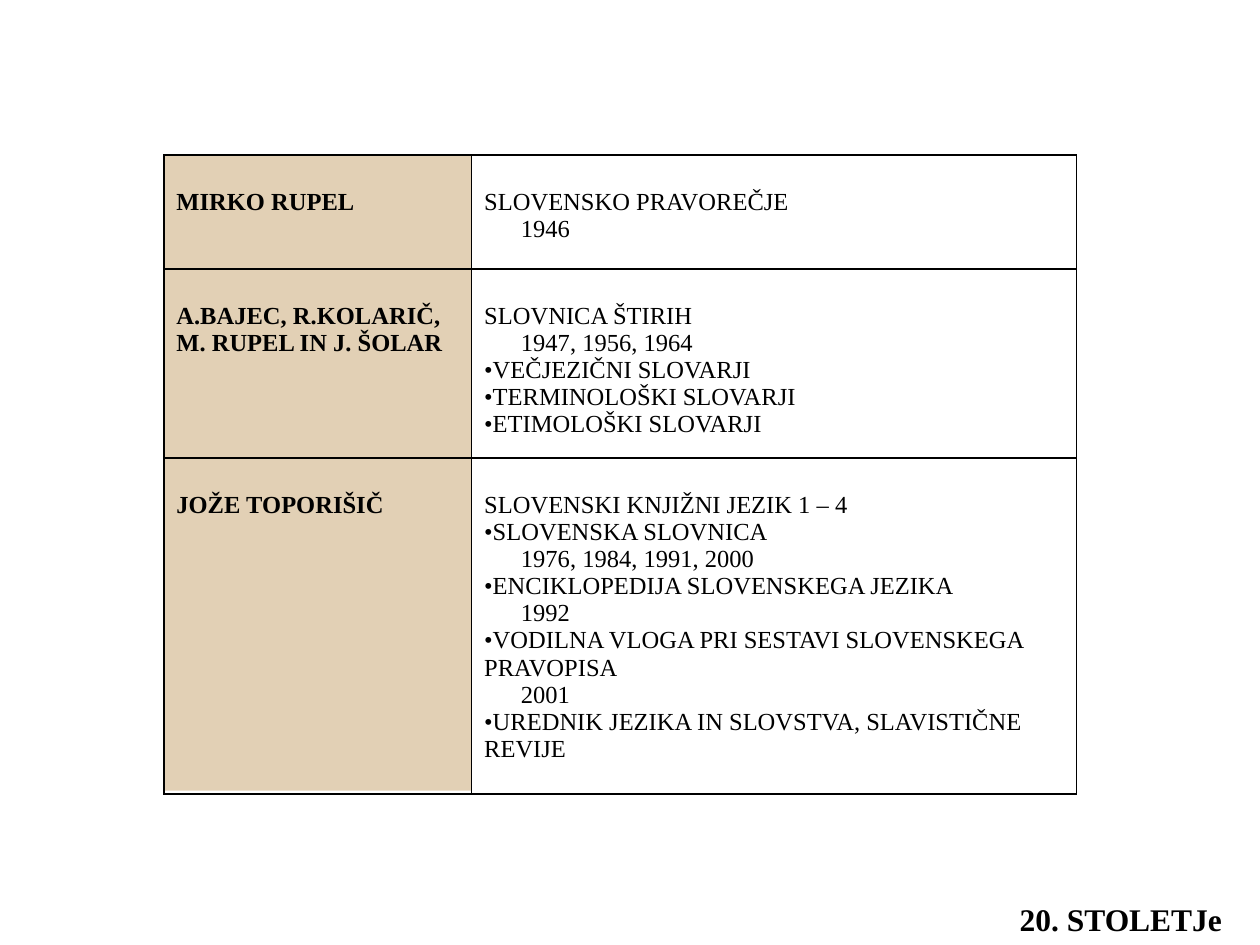
from lxml import etree
from pptx import Presentation
from pptx.dml.color import RGBColor
from pptx.enum.shapes import MSO_SHAPE
from pptx.enum.text import MSO_AUTO_SIZE, PP_ALIGN
from pptx.oxml.ns import qn
from pptx.util import Pt

RECT = MSO_SHAPE.RECTANGLE
CENTER = PP_ALIGN.CENTER
GROW = MSO_AUTO_SIZE.SHAPE_TO_FIT_TEXT
FONT = "Times New Roman"
BLACK, TAN = "000000", "D5BA93"
TEXT, BULLET, YEAR = "text", "bullet", "year"

COLS = [175.9, 345.6]
ROWS = [
    (65.2, ["MIRKO RUPEL"],
     [(TEXT, "SLOVENSKO PRAVOREČJE"), (YEAR, "1946")]),
    (108, ["A.BAJEC, R.KOLARIČ,", "M. RUPEL IN J. ŠOLAR"],
     [(TEXT, "SLOVNICA ŠTIRIH"), (YEAR, "1947, 1956, 1964"),
      (BULLET, "VEČJEZIČNI SLOVARJI"), (BULLET, "TERMINOLOŠKI SLOVARJI"),
      (BULLET, "ETIMOLOŠKI SLOVARJI")]),
    (192, ["JOŽE TOPORIŠIČ"],
     [(TEXT, "SLOVENSKI KNJIŽNI JEZIK 1 – 4"),
      (BULLET, "SLOVENSKA SLOVNICA"), (YEAR, "1976, 1984, 1991, 2000"),
      (BULLET, "ENCIKLOPEDIJA SLOVENSKEGA JEZIKA"), (YEAR, "1992"),
      (BULLET, "VODILNA VLOGA PRI SESTAVI SLOVENSKEGA PRAVOPISA"),
      (YEAR, "2001"),
      (BULLET, "UREDNIK JEZIKA IN SLOVSTVA, SLAVISTIČNE REVIJE")]),
]


def color(code):
    return RGBColor.from_string(code)


def add_run(para, text, size, bold=False):
    run = para.add_run()
    run.text = text
    font = run.font
    font.name, font.size, font.bold = FONT, Pt(size), bold
    font.color.rgb = color(BLACK)


def style_para(para, kind):
    props = para._p.get_or_add_pPr()
    props.set("marL", str(Pt(21) if kind == YEAR else 0))
    props.set("indent", "0")
    if kind == BULLET:
        etree.SubElement(props, qn("a:buFont")).set("typeface", FONT)
        etree.SubElement(props, qn("a:buChar")).set("char", "•")
    else:
        etree.SubElement(props, qn("a:buNone"))


def add_border(cell):
    props = cell._tc.get_or_add_tcPr()
    for side in ("a:lnL", "a:lnR", "a:lnT", "a:lnB"):
        line = etree.SubElement(props, qn(side), w=str(Pt(1)))
        fill = etree.SubElement(line, qn("a:solidFill"))
        etree.SubElement(fill, qn("a:srgbClr"), val=BLACK)


def fill_cell(cell, items, bold):
    add_border(cell)
    cell.fill.background()
    cell.margin_left = cell.margin_right = Pt(7.2)
    cell.margin_top, cell.margin_bottom = Pt(19.2), Pt(3.6)
    frame = cell.text_frame
    for i, (kind, text) in enumerate(items):
        para = frame.add_paragraph() if i else frame.paragraphs[0]
        style_para(para, kind)
        add_run(para, text, 14, bold)


def add_panel(slide, left, top, width, height):
    panel = slide.shapes.add_shape(RECT, Pt(left), Pt(top), Pt(width), Pt(height))
    panel.shadow.inherit = False
    panel.line.fill.background()
    panel.fill.solid()
    panel.fill.fore_color.rgb = color(TAN)
    tint = panel._element.spPr.find(".//" + qn("a:srgbClr"))
    etree.SubElement(tint, qn("a:alpha"), val="68000")


def add_works(slide, left, top):
    height = sum(row[0] for row in ROWS)
    # Tinted panel behind the authors
    add_panel(slide, left, top, COLS[0], height - 2)

    # Authors and their works
    table = slide.shapes.add_table(len(ROWS), len(COLS), Pt(left), Pt(top),
                                   Pt(sum(COLS)), Pt(height)).table
    table.first_row = table.horz_banding = False
    for col, width in zip(table.columns, COLS):
        col.width = Pt(width)
    for i, (tall, names, works) in enumerate(ROWS):
        table.rows[i].height = Pt(tall)
        fill_cell(table.cell(i, 0), [(TEXT, name) for name in names], True)
        fill_cell(table.cell(i, 1), works, False)


def add_label(slide, left, top, width, height):
    box = slide.shapes.add_textbox(Pt(left), Pt(top), Pt(width), Pt(height))
    frame = box.text_frame
    frame.word_wrap = False
    frame.auto_size = GROW
    para = frame.paragraphs[0]
    para.alignment = CENTER
    add_run(para, "20. STOLETJe", 18, True)


def main():
    deck = Presentation()
    deck.slide_width, deck.slide_height = Pt(720), Pt(540)
    slide = deck.slides.add_slide(deck.slide_layouts[6])
    add_works(slide, 93.6, 88.6)
    # Century label
    add_label(slide, 572.5, 511, 136, 29)
    deck.save("out.pptx")


if __name__ == "__main__":
    main()
